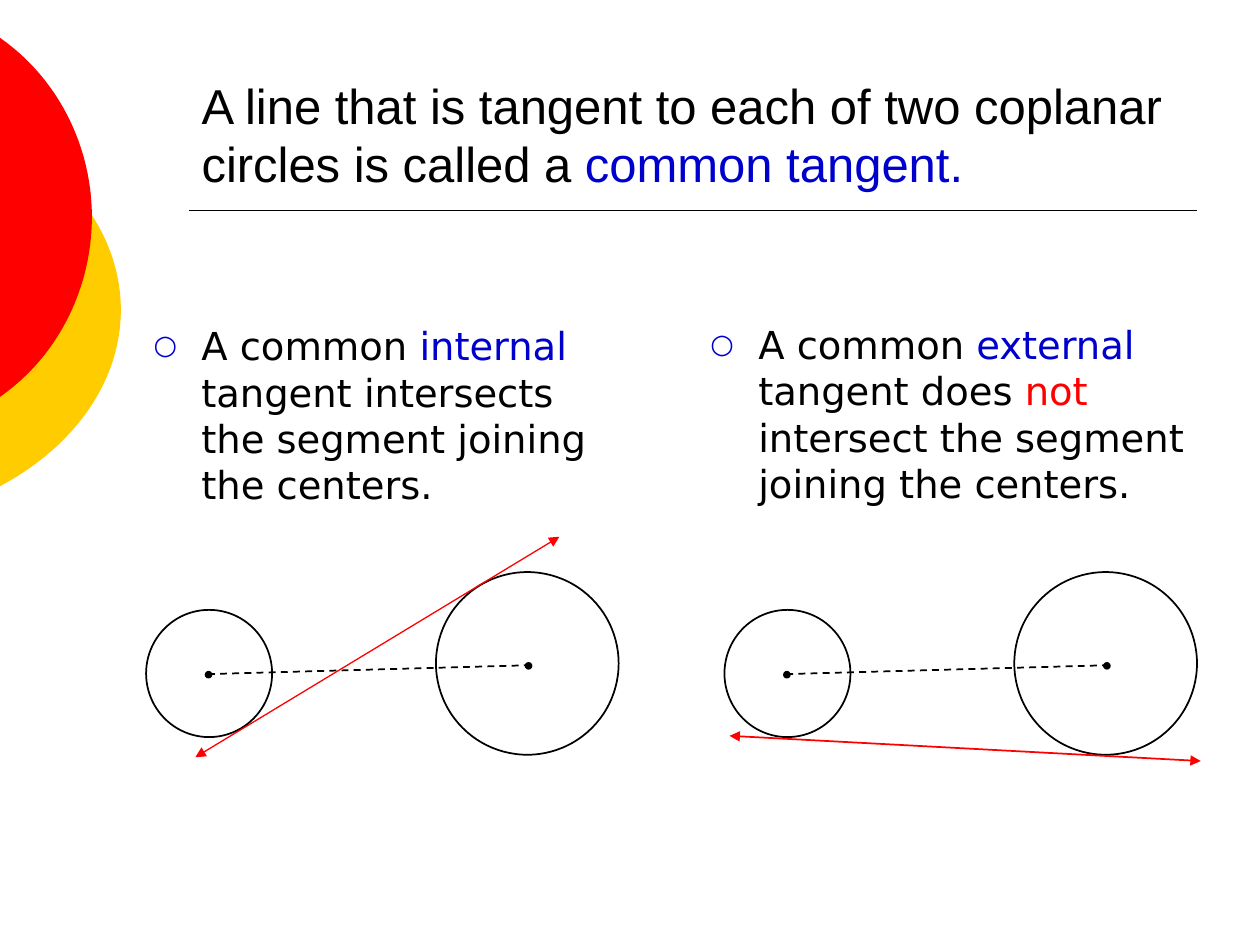
from dataclasses import dataclass

from lxml.etree import SubElement
from pptx import Presentation
from pptx.dml.color import RGBColor as Rgb
from pptx.enum.dml import MSO_LINE as Dash
from pptx.enum.shapes import MSO_CONNECTOR as Link, MSO_SHAPE as Kind
from pptx.enum.text import MSO_ANCHOR as Anchor, MSO_AUTO_SIZE as Fit, PP_ALIGN as Align
from pptx.oxml.ns import qn
from pptx.util import Inches, Pt


@dataclass(frozen=True)
class Theme:
    black: str = "000000"
    blue: str = "0000CC"
    red: str = "FF0000"
    gold: str = "FFCC00"
    head: str = "Arial"
    body: str = "DejaVu Sans"
    big: int = 28
    mid: int = 22
    thin: float = 0.75
    line: float = 1


class Board:
    def __init__(self, slide, theme):
        self.slide = slide
        self.theme = theme
        self.shapes = slide.shapes

    def fill_text(self, para, parts, font, size):
        for text, color in parts:
            run = para.add_run()
            run.text = text
            run.font.name = font
            run.font.size = Pt(size)
            run.font.color.rgb = Rgb.from_string(color)

    def title(self, box, parts):
        shape = self.shapes.title
        shape.left, shape.top, shape.width, shape.height = map(Inches, box)
        frame = shape.text_frame
        frame.auto_size = Fit.NONE
        frame.word_wrap = True
        frame.vertical_anchor = Anchor.BOTTOM
        para = frame.paragraphs[0]
        para.alignment = Align.LEFT
        self.fill_text(para, parts, self.theme.head, self.theme.big)

    def bullet(self, box, parts):
        frame = self.shapes.add_textbox(*map(Inches, box)).text_frame
        frame.word_wrap = True
        para = frame.paragraphs[0]
        para.space_before = Pt(4.4)
        props = para._p.get_or_add_pPr()
        props.set("marL", str(Inches(0.38)))
        props.set("indent", str(-Inches(0.38)))
        color = SubElement(props, qn("a:buClr"))
        SubElement(color, qn("a:srgbClr"), val=self.theme.blue)
        SubElement(props, qn("a:buSzPct"), val="70000")
        SubElement(props, qn("a:buFont"), typeface=self.theme.body)
        SubElement(props, qn("a:buChar"), char="○")
        self.fill_text(para, parts, self.theme.body, self.theme.mid)

    def disc(self, curves, color, steps=24):
        points = []
        for curve in curves:
            for i in range(steps + 1):
                t = i / steps
                mix = ((1 - t) ** 3, 3 * t * (1 - t) ** 2, 3 * t * t * (1 - t), t ** 3)
                points.append(tuple(
                    Inches(sum(m * p[axis] for m, p in zip(mix, curve)))
                    for axis in (0, 1)))
        outline = self.shapes.build_freeform(*points[0], scale=1.0)
        outline.add_line_segments(points[1:], close=True)
        shape = outline.convert_to_shape()
        shape.shadow.inherit = False
        shape.fill.solid()
        shape.fill.fore_color.rgb = Rgb.from_string(color)
        shape.line.fill.background()

    def oval(self, box, width, solid=False):
        shape = self.shapes.add_shape(Kind.OVAL, *map(Inches, box))
        shape.shadow.inherit = False
        black = Rgb.from_string(self.theme.black)
        if solid:
            shape.fill.solid()
            shape.fill.fore_color.rgb = black
        else:
            shape.fill.background()
        shape.line.color.rgb = black
        shape.line.width = Pt(width)

    def rule(self, start, end, color, width, dash=False, arrows=False):
        link = self.shapes.add_connector(
            Link.STRAIGHT, *map(Inches, (*start, *end)))
        link.line.color.rgb = Rgb.from_string(color)
        link.line.width = Pt(width)
        if dash:
            link.line.dash_style = Dash.DASH
        props = link._element.spPr
        if arrows:
            for tag in ("a:headEnd", "a:tailEnd"):
                SubElement(props.find(qn("a:ln")), qn(tag), type="triangle")
        SubElement(props, qn("a:effectLst"))

    def pair(self, x):
        theme = self.theme
        self.oval((x, 4.84, 1, 1.01), theme.line)
        self.oval((x + 0.47, 5.33, 0.05, 0.05), theme.thin, True)
        self.oval((x + 2.3, 4.54, 1.45, 1.45), theme.line)
        self.oval((x + 3.01, 5.26, 0.05, 0.05), theme.thin, True)
        self.rule((x + 0.49, 5.35), (x + 3.03, 5.28),
                  theme.black, theme.line, dash=True)


def main():
    deck = Presentation()
    deck.slide_width, deck.slide_height = Inches(10), Inches(7.5)
    theme = Theme()
    board = Board(deck.slides.add_slide(deck.slide_layouts[5]), theme)
    black, blue, red = theme.black, theme.blue, theme.red

    board.disc([((0, 1.06), (0.6, 1.38), (0.96, 1.9), (0.96, 2.46)),
                ((0.96, 2.46), (0.96, 3.02), (0.6, 3.54), (0, 3.86))], theme.gold)
    board.disc([((0, 0.3), (0.46, 0.62), (0.73, 1.16), (0.73, 1.72)),
                ((0.73, 1.72), (0.73, 2.29), (0.46, 2.83), (0, 3.15))], red)
    board.rule((1.5, 1.67), (9.5, 1.67), black, theme.line)

    board.title((1.5, 0.33, 8, 1.25), [
        ("A line that is tangent to each of two coplanar circles is called a", black),
        (" common tangent.", blue)])
    board.bullet((1.12, 2.51, 3.91, 2.29), [
        ("A common ", black), ("internal", blue),
        (" tangent intersects the segment joining the centers.", black)])
    board.bullet((5.54, 2.5, 4.22, 1.73), [
        ("A common ", black), ("external", blue), (" tangent does ", black),
        ("not", red), (" intersect the segment joining the centers.", black)])

    for x in (1.16, 5.75):
        board.pair(x)
    board.rule((1.55, 6.01), (4.44, 4.26), red, theme.thin, arrows=True)
    board.rule((5.79, 5.84), (9.53, 6.04), red, theme.line, arrows=True)
    deck.save("out.pptx")


if __name__ == "__main__":
    main()
